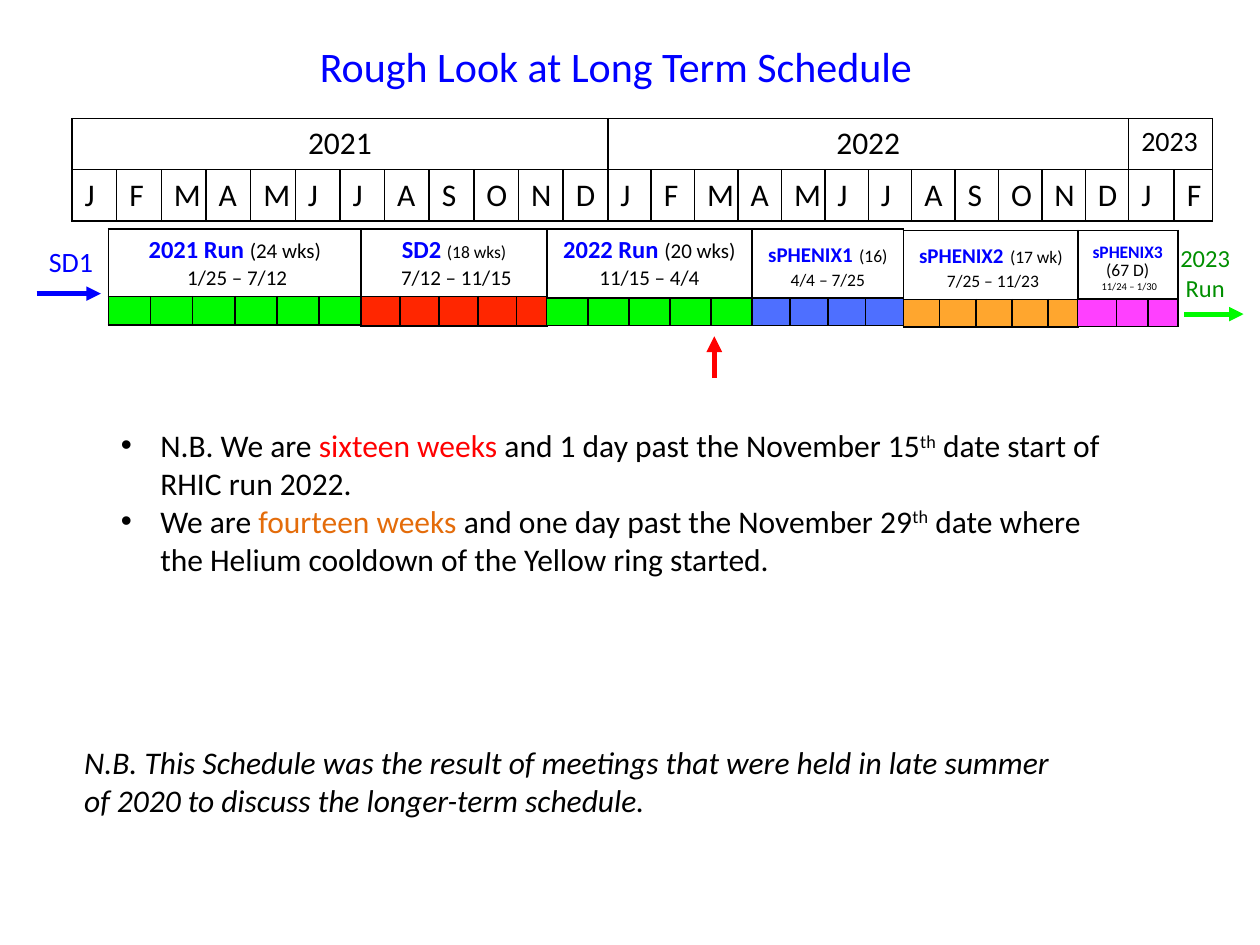
from lxml import etree
from pptx import Presentation
from pptx import util as u
from pptx.dml.color import RGBColor
from pptx.enum import shapes, text
from pptx.oxml import ns

COLORS = {
    "black": "000000", "blue": "0000FF", "red": "FF0000", "green": "00FA00",
    "dark_green": "008F00", "rust": "E46C0A", "fire": "FF2600",
    "royal": "0432FF", "orange": "FF9300", "magenta": "FF40FF",
}
FONT = "Calibri"
MONTHS = "JFMAMJJASOND"


def rgb(color):
    return RGBColor.from_string(COLORS[color])


def sub(parent, tag, **attributes):
    return etree.SubElement(parent, ns.qn(tag), **attributes)


def add_run(paragraph, words, size, color="black", bold=False, italic=False, raised=False):
    run = paragraph.add_run()
    run.text = words
    font = run.font
    font.name, font.size = FONT, u.Pt(size)
    font.bold, font.italic = bold, italic
    font.color.rgb = rgb(color)
    if raised:
        font._element.set("baseline", "30000")


def fill_frame(frame, paragraphs, align=text.PP_ALIGN.LEFT, spacing=None):
    for index, runs in enumerate(paragraphs):
        paragraph = frame.add_paragraph() if index else frame.paragraphs[0]
        paragraph.alignment = align
        if spacing:
            paragraph.line_spacing = spacing
        for run in runs:
            add_run(paragraph, *run)


def add_text(slide, box, paragraphs, align=text.PP_ALIGN.LEFT, wrap=True):
    frame = slide.shapes.add_textbox(*map(u.Pt, box)).text_frame
    frame.word_wrap = wrap
    frame.auto_size = text.MSO_AUTO_SIZE.SHAPE_TO_FIT_TEXT
    fill_frame(frame, paragraphs, align)
    return frame


def add_bullets(frame, indent):
    for paragraph in frame.paragraphs:
        properties = paragraph._p.get_or_add_pPr()
        properties.set("marL", str(u.Pt(indent)))
        properties.set("indent", str(-u.Pt(indent)))
        sub(properties, "a:buFont", typeface="Arial")
        sub(properties, "a:buChar", char="•")


def add_arrow(slide, start, end, color, width=2.75):
    arrow = slide.shapes.add_connector(
        shapes.MSO_CONNECTOR.STRAIGHT, *map(u.Pt, (*start, *end)))
    arrow.line.color.rgb = rgb(color)
    arrow.line.width = u.Pt(width)
    sub(arrow.line._get_or_add_ln(), "a:tailEnd", type="triangle")
    sub(arrow._element.spPr, "a:effectLst")


def style_cell(cell, color=None, opacity=100):
    if color:
        cell.fill.solid()
        cell.fill.fore_color.rgb = rgb(color)
    else:
        cell.fill.background()
    properties = cell._tc.get_or_add_tcPr()
    if opacity < 100:
        sub(properties.find(".//" + ns.qn("a:srgbClr")), "a:alpha", val=str(opacity * 1000))
    for index, side in enumerate("LRTB"):
        border = etree.Element(ns.qn("a:ln" + side), w=str(u.Pt(1)))
        sub(sub(border, "a:solidFill"), "a:srgbClr", val=COLORS["black"])
        properties.insert(index, border)


def add_grid(slide, left, top, columns, rows):
    box = map(u.Pt, (left, top, sum(columns), sum(rows)))
    table = slide.shapes.add_table(len(rows), len(columns), *box).table
    table.first_row = table.horz_banding = False
    for column, width in zip(table.columns, columns):
        column.width = u.Pt(width)
    for row, height in zip(table.rows, rows):
        row.height = u.Pt(height)
    return table


def add_calendar(slide):
    columns = [25.52] * 12 + [24.83] * 12 + [26, 22]
    table = add_grid(slide, 41.2, 67.8, columns, [29.2, 29.2])
    for cell in table.iter_cells():
        style_cell(cell)
    years = [("2021", 0, 11, 18, text.PP_ALIGN.CENTER),
             ("2022", 12, 23, 18, text.PP_ALIGN.CENTER),
             ("2023", 24, 25, 16, text.PP_ALIGN.LEFT)]
    for year, first, last, size, align in years:
        cell = table.cell(0, first)
        cell.merge(table.cell(0, last))
        fill_frame(cell.text_frame, [[(year, size)]], align)
    for index in range(len(columns)):
        month = MONTHS[index % len(MONTHS)]
        fill_frame(table.cell(1, index).text_frame, [[(month, 18)]])


def add_phase(slide, left, top, columns, rows, color, opacity, label, spacing=None):
    table = add_grid(slide, left, top, columns, rows)
    for index in range(len(columns)):
        style_cell(table.cell(0, index))
        block = table.cell(1, index)
        style_cell(block, color, opacity)
        sub(block.text_frame.paragraphs[0]._p, "a:endParaRPr", sz="600")
    heading = table.cell(0, 0)
    heading.merge(table.cell(0, len(columns) - 1))
    fill_frame(heading.text_frame, label, text.PP_ALIGN.CENTER, spacing)


def add_phases(slide):
    def name(words, size):
        return (words, size, "blue", True)

    gap = name(" ", 16)
    phases = [
        (131, [24.07] * 6, [38.2, 16.4], "green", 100,
         [[name("2021 Run ", 14), ("(24 wks)", 12)], [(" 1/25 – 7/12", 12)]]),
        (131, [22.2] * 4 + [17.2], [38.2, 17], "fire", 100,
         [[name("SD2 ", 14), ("(18 wks)", 10)], [(" 7/12 – 11/15", 12)]]),
        (131, [23.48] * 5, [39.4, 15.6], "green", 100,
         [[name("2022 Run ", 14), ("(20 wks) 11/15 – 4/4", 12)]]),
        (131, [21.6] * 4, [39.4, 15.6], "royal", 70,
         [[name("sPHENIX1", 12), gap, ("(16) 4/4 – 7/25", 10)]]),
        (131.8, [20.7] * 4 + [16.6], [39.4, 15.6], "orange", 82,
         [[name("sPHENIX2", 12), gap, ("(17 wk)", 10)], [(" 7/25 – 11/23", 10)]]),
        (131.8, [22.3, 18, 16.6], [38.9, 15.6], "magenta", 100,
         [[name("sPHENIX3", 10), gap, ("(67 D)", 10)], [(" ", 8), ("11/24 – 1/30", 6)]], 0.78),
    ]
    left = 62
    for top, columns, *rest in phases:
        add_phase(slide, left, top, columns, *rest)
        left += sum(columns)


def add_notes(slide):
    notes = add_text(slide, (62, 240, 582.5, 94.5), [
        [("N.B. We are ", 18), ("sixteen weeks ", 18, "red"),
         ("and 1 day past the November 15", 18), ("th", 18, "black", False, False, True),
         (" date start of RHIC run 2022.", 18)],
        [("We are ", 18), ("fourteen weeks ", 18, "rust"),
         ("and one day past the November 29", 18), ("th", 18, "black", False, False, True),
         (" date where the Helium cooldown of the Yellow ring started.", 18)],
    ])
    add_bullets(notes, 22.5)
    add_text(slide, (41, 421.2, 584.6, 51), [[(
        "N.B. This Schedule was the result of meetings that were held in late summer "
        "of 2020 to discuss the longer-term schedule.", 18, "black", False, True)]])


def main():
    deck = Presentation()
    deck.slide_width, deck.slide_height = u.Pt(720), u.Pt(540)
    slide = deck.slides.add_slide(deck.slide_layouts[6])

    add_text(slide, (175.7, 19.4, 369.4, 36),
             [[("Rough Look at Long Term Schedule", 24, "blue")]])
    add_calendar(slide)
    add_phases(slide)

    add_text(slide, (20.9, 136, 40.3, 26.6), [[("SD1", 16, "blue")]], wrap=False)
    add_text(slide, (662.4, 135.4, 52.6, 41),
             [[("2023", 14, "dark_green")], [("Run", 14, "dark_green")]],
             text.PP_ALIGN.CENTER)
    add_arrow(slide, (20.9, 167.8), (57.6, 167.8), "blue")
    add_arrow(slide, (676.8, 179.5), (710.6, 179.5), "green")
    add_arrow(slide, (408.2, 216), (408.2, 192.2), "red", 3)
    add_notes(slide)
    deck.save("out.pptx")


if __name__ == "__main__":
    main()
